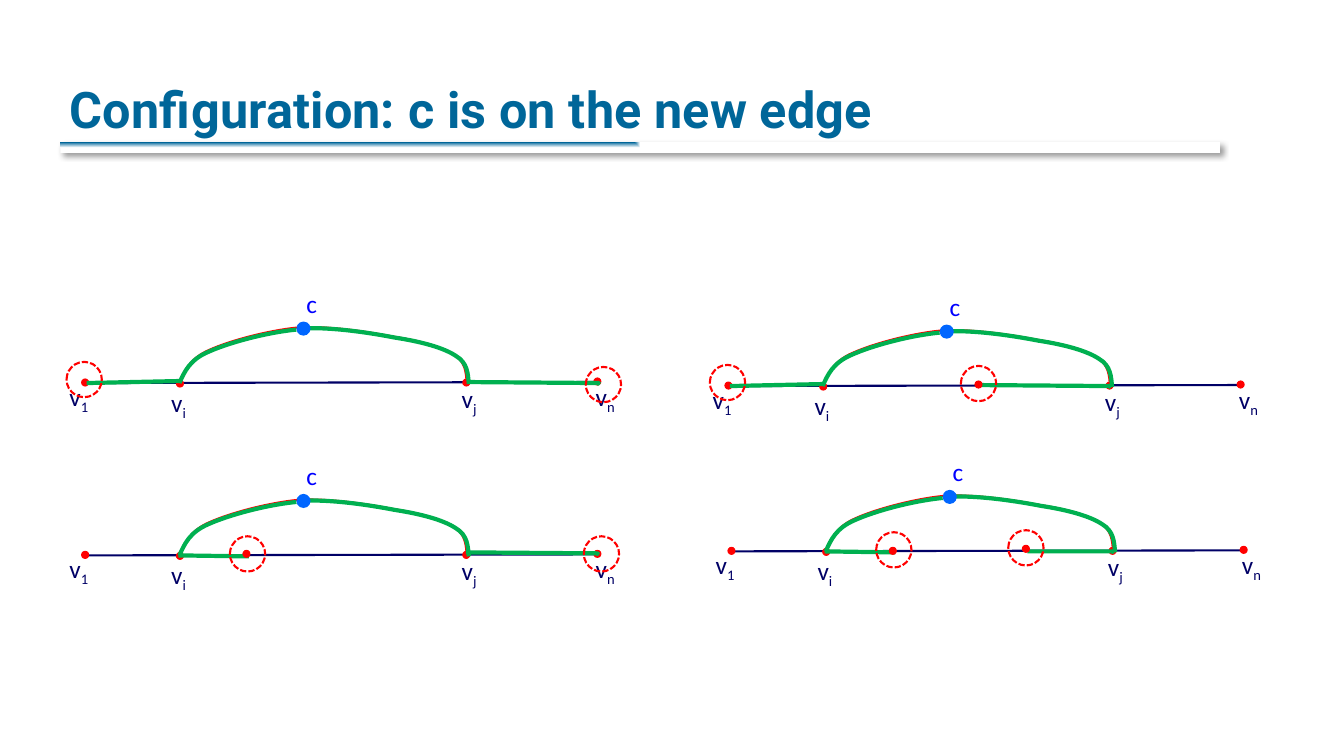
from dataclasses import dataclass

from lxml.etree import SubElement as Sub
from pptx import Presentation
from pptx.dml.color import RGBColor
from pptx.enum.dml import MSO_LINE as Dash
from pptx.enum.shapes import MSO_CONNECTOR as Link, MSO_SHAPE as Form
from pptx.enum.text import MSO_ANCHOR as Anchor, MSO_AUTO_SIZE as Fit
from pptx.oxml.ns import qn
from pptx.util import Pt

PX = 9144


@dataclass(frozen=True)
class Theme:
    teal: str = "006699"
    white: str = "FFFFFF"
    black: str = "000000"
    navy: str = "000066"
    blue: str = "0000FF"
    azure: str = "0066FF"
    red: str = "FF0000"
    green: str = "00B050"
    head: str = "Roboto"
    body: str = "Calibri"
    big: int = 36
    small: int = 18
    hair: float = 0.75
    thin: float = 1.5
    thick: float = 3


def rgb(code):
    return RGBColor.from_string(code)


def assign(obj, vals):
    for key, val in vals.items():
        setattr(obj, key, val)


class Board:
    def __init__(self, slide, theme):
        self.items = slide.shapes
        self.theme = theme
        self.move(0, 0)

    def move(self, x, y):
        self.x, self.y = x, y

    def spot(self, x, y):
        return (self.x + x) * PX, (self.y + y) * PX

    def stroke(self, item, color, width, dash=None):
        item.line.color.rgb = rgb(color)
        assign(item.line, {"width": Pt(width), "dash_style": dash})

    def shape(self, form, x, y, w, h, fill=None):
        item = self.items.add_shape(form, *self.spot(x, y), w * PX, h * PX)
        item.shadow.inherit = False
        item.line.fill.background()
        if fill:
            item.fill.solid()
            item.fill.fore_color.rgb = rgb(fill)
        else:
            item.fill.background()
        return item

    def text(self, x, y, w, h, words, frame, font, color, sub="", track=None):
        box = self.items.add_textbox(*self.spot(x, y), w * PX, h * PX).text_frame
        assign(box, frame)
        para = box.paragraphs[0]
        for part, base in ((words, None), (sub, "-25000")):
            if not part:
                continue
            run = para.add_run()
            run.text = part
            assign(run.font, font)
            run.font.color.rgb = rgb(color)
            for key, val in (("baseline", base), ("spc", track)):
                if val:
                    run._r.get_or_add_rPr().set(key, val)

    def title(self, words):
        t = self.theme
        self.text(59, 17, 1133, 125, words,
                  {"word_wrap": True, "vertical_anchor": Anchor.BOTTOM},
                  {"name": t.head, "size": Pt(t.big), "bold": True},
                  t.teal, track="10")

    def label(self, x, y, w, words, color, sub=""):
        t = self.theme
        self.text(x, y, w, 40, words,
                  {"word_wrap": False, "auto_size": Fit.SHAPE_TO_FIT_TEXT},
                  {"name": t.body, "size": Pt(t.small)}, color, sub)

    def rule(self, x, y, w, h):
        t = self.theme
        item = self.shape(Form.RECTANGLE, x, y, w, h)
        item.fill.gradient()
        for stop, color in zip(item.fill.gradient_stops, (t.teal, t.white)):
            stop.color.rgb = rgb(color)
        props = item._element.spPr
        grad = props.find(qn("a:gradFill"))
        grad.remove(grad.find(qn("a:lin")))
        glow = Sub(grad, qn("a:path"), {"path": "rect"})
        Sub(glow, qn("a:fillToRect"), {"r": "100000", "b": "100000"})
        shade = Sub(props.find(qn("a:effectLst")), qn("a:outerShdw"),
                    {"blurRad": str(Pt(4)), "dist": str(Pt(3)),
                     "dir": "2700000", "algn": "tl", "rotWithShape": "0"})
        tint = Sub(shade, qn("a:srgbClr"), {"val": t.black})
        Sub(tint, qn("a:alpha"), {"val": "40000"})

    def line(self, x1, y1, x2, y2):
        item = self.items.add_connector(
            Link.STRAIGHT, *self.spot(x1, y1), *self.spot(x2, y2))
        self.stroke(item, self.theme.navy, self.theme.thin)
        Sub(item._element.spPr, qn("a:effectLst"))

    def dot(self, x, y):
        t = self.theme
        self.stroke(self.shape(Form.OVAL, x, y, 7, 7, t.red), t.red, t.hair)

    def ring(self, x, y):
        t = self.theme
        item = self.shape(Form.OVAL, x, y, 35, 35)
        self.stroke(item, t.red, t.thin, Dash.SQUARE_DOT)

    def trace(self, points, color, width, curved=False):
        first, *rest = [(self.x + x, self.y + y) for x, y in points]
        pen = self.items.build_freeform(*first, scale=PX)
        pen.add_line_segments(rest, close=False)
        item = pen.convert_to_shape()
        item.shadow.inherit = False
        item.fill.background()
        self.stroke(item, color, width)
        if curved:
            steps = list(item._element.iter(qn("a:lnTo")))
            for i in range(0, len(steps), 3):
                bend = Sub(steps[i].getparent(), qn("a:cubicBezTo"))
                for step in steps[i:i + 3]:
                    bend.append(step[0])
                    step.getparent().remove(step)


ARC = [(179, 378), (184, 367), (189, 355), (208, 347), (228, 338), (265, 328),
       (295, 325), (325, 323), (364, 329), (390, 334), (416, 338), (438, 344),
       (450, 352), (462, 359), (462, 370), (463, 380)]
DOTS = [(589, 375), (81, 376), (175, 377), (459, 376)]
MARKS = [("n", 581, 373, 40), ("1", 59, 373, 40),
         ("i", 160, 379, 35), ("j", 448, 375, 35)]
HEAD = [(86, 380), (179, 378)]
STUB = [(177, 380), (247, 381)]
CASES = [
    {"at": (0, 0), "rings": [(66, 359), (581, 364)], "dots": [],
     "runs": [HEAD, [(464, 379), (594, 380), (592, 381)]]},
    {"at": (638, 3), "rings": [(66, 359), (315, 360)], "dots": [(329, 375)],
     "runs": [HEAD, [(333, 379), (463, 380), (461, 381)]]},
    {"at": (0, 171), "rings": [(579, 361), (228, 361)], "dots": [(241, 375)],
     "runs": [STUB, [(462, 377), (593, 378), (591, 379)]]},
    {"at": (641, 167), "rings": [(359, 359), (228, 361)],
     "dots": [(373, 374), (241, 376)],
     "runs": [STUB, [(378, 380), (463, 380), (461, 381)]]},
]


def shift(points, dx, dy):
    return [(x + dx, y + dy) for x, y in points]


def draw(board, case):
    t = board.theme
    board.move(*case["at"])
    board.line(85, 380, 593, 379)
    for place in DOTS:
        board.dot(*place)
    for sub, x, y, w in MARKS:
        board.label(x, y, w, "v", t.navy, sub)
    board.label(294, 281, 31, "c", t.blue)
    board.trace(ARC, t.red, t.thin, True)
    board.trace(shift(ARC[:7], -1, 2), t.green, t.thick, True)
    board.trace(shift(ARC[6:], 2, 1), t.green, t.thick, True)
    for run in case["runs"]:
        board.trace(run, t.green, t.thick)
    board.shape(Form.OVAL, 294, 319, 14, 14, t.azure)
    for place in case["rings"]:
        board.ring(*place)
    for place in case["dots"]:
        board.dot(*place)


def main():
    deck = Presentation()
    assign(deck, {"slide_width": 1333 * PX, "slide_height": 750 * PX})
    board = Board(deck.slides.add_slide(deck.slide_layouts[6]), Theme())
    board.rule(60, 141, 1150, 11)
    board.title("Configuration: c is on the new edge")
    for case in CASES:
        draw(board, case)
    deck.save("out.pptx")


if __name__ == "__main__":
    main()
